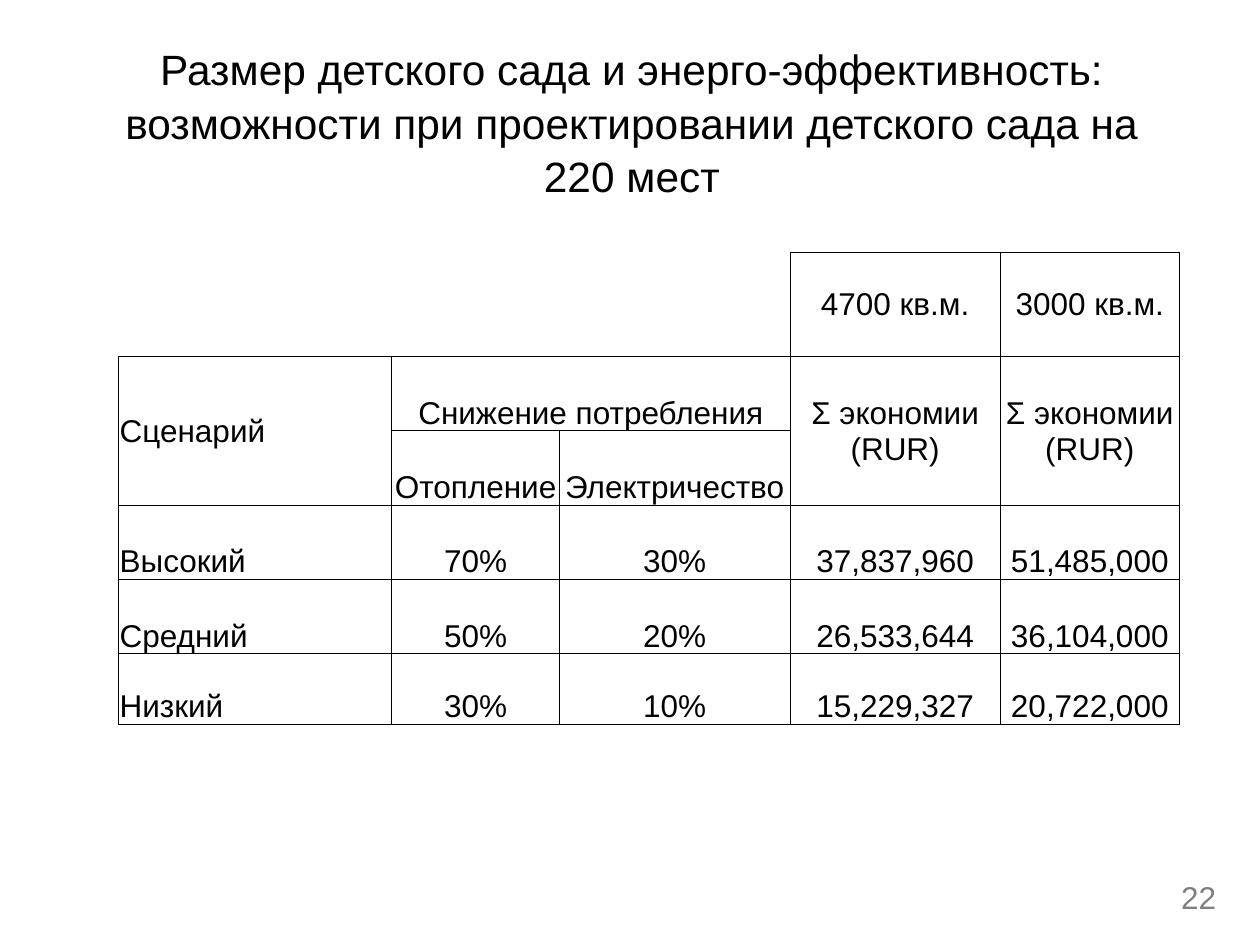
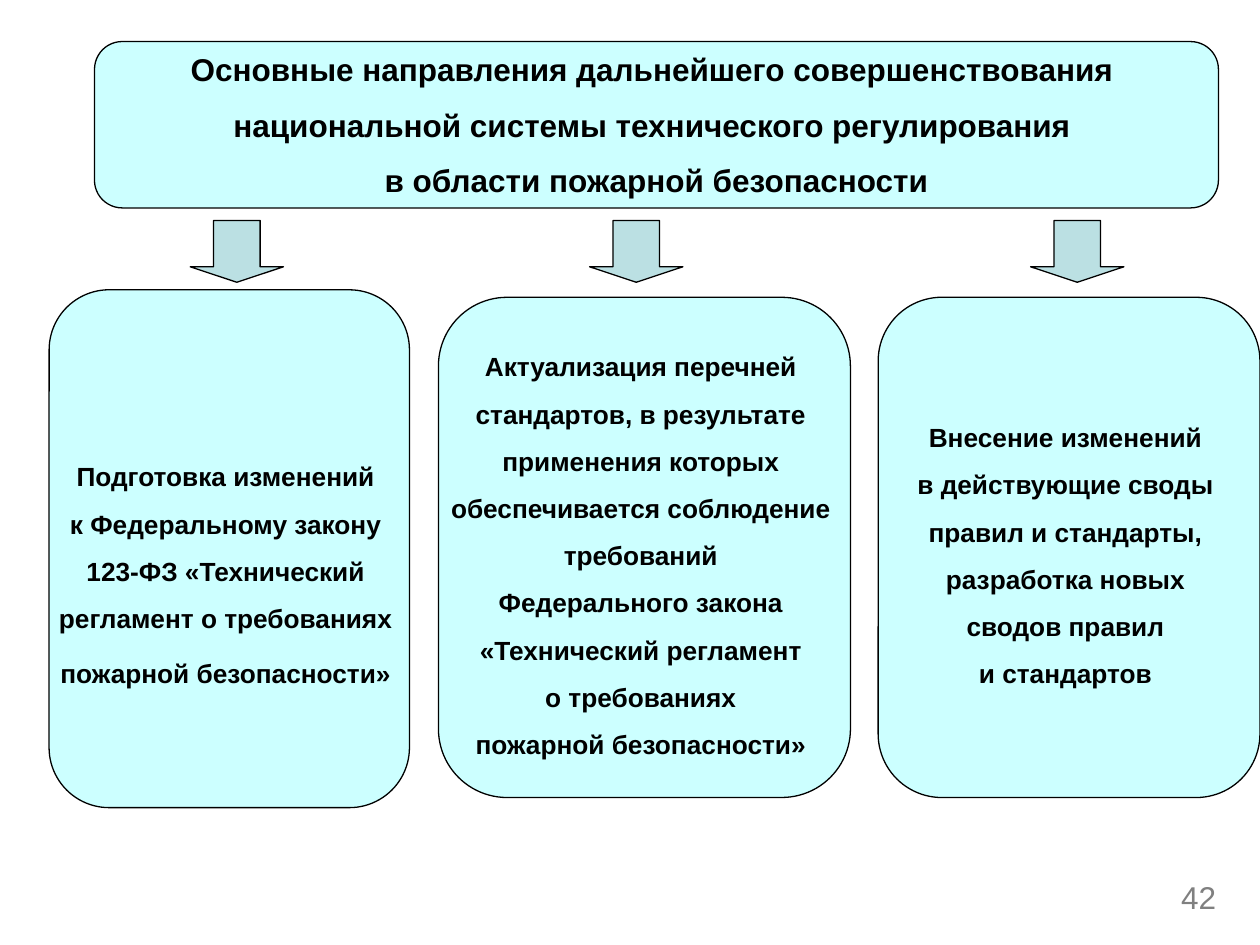
"""Builds two slides: a table of kindergarten energy savings and a fire-safety regulation scheme."""
from lxml.etree import SubElement
from pptx import Presentation
from pptx.dml.color import RGBColor
from pptx.enum.shapes import MSO_SHAPE
from pptx.enum.text import MSO_ANCHOR, PP_ALIGN
from pptx.oxml.ns import qn
from pptx.util import Inches, Pt

FONT = "Arial"
COLORS = {"text": "000000", "number": "808080", "panel": "CCFFFF", "arrow": "BBE0E3"}
NO_STYLE = "{2D5ABB26-0587-4C30-8999-92F81FD0307C}"

TITLE = ("Размер детского сада и энерго-эффективность: возможности "
         "при проектировании детского сада на 220 мест")
COL_WIDTHS = [2.17, 1.33, 1, 0.83, 1.67, 1.42]
ROW_HEIGHTS = [0.83, 0.59, 0.59, 0.59, 0.59, 0.56]
SAVINGS = "Σ экономии\v(RUR)"
ROWS = [
    ["", "", "", "", "4700 кв.м.", "3000 кв.м."],
    ["Сценарий", "Снижение потребления", "", "", SAVINGS, SAVINGS],
    ["", "Отопление", "Электричество", "", "", ""],
    ["Высокий", "70%", "30%", "", "37,837,960", "51,485,000"],
    ["Средний", "50%", "20%", "", "26,533,644", "36,104,000"],
    ["Низкий", "30%", "10%", "", "15,229,327", "20,722,000"],
]
MERGES = [((0, 1), (0, 2)), ((1, 1), (1, 3))]
MERGES += [((1, c), (2, c)) for c in (0, 4, 5)]
MERGES += [((r, 2), (r, 3)) for r in range(2, 6)]
MIDDLE_CELLS = {(0, 4), (0, 5), (1, 0), (1, 4), (1, 5)}
BLANK_COLS = 4

HEADING = [
    "Основные направления дальнейшего совершенствования ",
    "национальной системы технического регулирования ",
    "в области пожарной безопасности",
]
DIRECTIONS = [
    {"box": (0.39, 2.3, 2.86, 4.11), "arrow_x": 1.51, "top_inset": 0.34, "last_gap": 4.5,
     "lines": ["Подготовка изменений ", "к Федеральному закону ",
               "123-ФЗ «Технический ", "регламент о требованиях ",
               "пожарной безопасности» "]},
    {"box": (3.48, 2.36, 3.27, 3.97), "arrow_x": 4.68,
     "lines": ["Актуализация перечней ", "стандартов, в результате ",
               "применения которых ", "обеспечивается соблюдение ",
               "требований ", "Федерального закона ",
               "«Технический регламент ", "о требованиях ",
               "пожарной безопасности» "]},
    {"box": (6.97, 2.36, 3.03, 3.97), "arrow_x": 8.18,
     "lines": ["Внесение изменений ", "в действующие своды ",
               "правил и стандарты, ", "разработка новых ",
               "сводов правил ", "и стандартов "]},
]


def rgb(name):
    return RGBColor.from_string(COLORS[name])


def style(p, size, align, color="text", bold=False):
    p.alignment = align
    p.font.name, p.font.size, p.font.bold = FONT, Pt(size), bold
    p.font.color.rgb = rgb(color)


def add_text(s, box, text, size, align, color="text"):
    tf = s.shapes.add_textbox(*map(Inches, box)).text_frame
    tf.word_wrap = True
    tf.text = text
    style(tf.paragraphs[0], size, align, color)
    return tf


def new_slide(prs, number):
    s = prs.slides.add_slide(prs.slide_layouts[6])
    add_text(s, (8.25, 6.92, 1.5, 0.43), str(number), 18, PP_ALIGN.RIGHT, "number")
    return s


def add_outlined(s, kind, box, fill):
    sp = s.shapes.add_shape(kind, *map(Inches, box))
    sp.shadow.inherit = False
    sp.fill.solid()
    sp.fill.fore_color.rgb = rgb(fill)
    sp.line.color.rgb = rgb("text")
    sp.line.width = Pt(0.75)
    return sp


def add_panel(s, box, lines, size, top_inset=0.05, spacing=None, gap=0):
    sp = add_outlined(s, MSO_SHAPE.FLOWCHART_ALTERNATE_PROCESS, box, "panel")
    tf = sp.text_frame
    tf.word_wrap = False
    tf.vertical_anchor = MSO_ANCHOR.MIDDLE
    tf.margin_top = Inches(top_inset)
    tf.text = "\n".join(lines)
    for i, p in enumerate(tf.paragraphs):
        style(p, size, PP_ALIGN.CENTER, bold=True)
        p.line_spacing = spacing
        p.space_before = Pt(gap if i else 0)
    return tf


def set_borders(cell, visible):
    tc_pr = cell._tc.get_or_add_tcPr()
    for i, side in enumerate("LRTB"):
        ln = SubElement(tc_pr, qn(f"a:ln{side}"), w=str(Pt(0.5)))
        if side in visible:
            fill = SubElement(ln, qn("a:solidFill"))
            SubElement(fill, qn("a:srgbClr"), val=COLORS["text"])
        else:
            SubElement(ln, qn("a:noFill"))
        tc_pr.insert(i, ln)


def add_savings_table(s):
    frame = s.shapes.add_table(len(ROWS), len(COL_WIDTHS), Inches(0.94), Inches(2),
                               Inches(sum(COL_WIDTHS)), Inches(sum(ROW_HEIGHTS)))
    table = frame.table
    table.first_row = table.horz_banding = False
    table._tbl.tblPr.find(qn("a:tableStyleId")).text = NO_STYLE
    for col, width in zip(table.columns, COL_WIDTHS):
        col.width = Inches(width)
    for row, height in zip(table.rows, ROW_HEIGHTS):
        row.height = Inches(height)
    for r, texts in enumerate(ROWS):
        for c, text in enumerate(texts):
            cell = table.cell(r, c)
            cell.fill.background()
            cell.margin_left = cell.margin_right = cell.margin_top = Inches(0.01)
            cell.margin_bottom = 0
            middle = (r, c) in MIDDLE_CELLS
            cell.vertical_anchor = MSO_ANCHOR.MIDDLE if middle else MSO_ANCHOR.BOTTOM
            cell.text = text
            style(cell.text_frame.paragraphs[0], 18, PP_ALIGN.CENTER if c else PP_ALIGN.LEFT)
            if r == 0 and c < BLANK_COLS:
                set_borders(cell, "RB" if c == BLANK_COLS - 1 else "B")
            else:
                set_borders(cell, "LRTB")
    for first, last in MERGES:
        table.cell(*first).merge(table.cell(*last))


def build_savings(prs):
    s = new_slide(prs, 22)
    add_savings_table(s)
    tf = add_text(s, (0.67, 0.42, 8.69, 1.08), TITLE, 24.2, PP_ALIGN.CENTER)
    tf.vertical_anchor = MSO_ANCHOR.MIDDLE
    tf.paragraphs[0].line_spacing = 1.05


def build_directions(prs):
    s = new_slide(prs, 42)
    add_panel(s, (0.75, 0.33, 8.92, 1.32), HEADING, 18, gap=10)
    for d in DIRECTIONS:
        tf = add_panel(s, d["box"], d["lines"], 15, d.get("top_inset", 0.05), spacing=1.5)
        tf.paragraphs[-1].space_before = Pt(d.get("last_gap", 0))
        arrow = add_outlined(s, MSO_SHAPE.DOWN_ARROW, (d["arrow_x"], 1.75, 0.74, 0.49), "arrow")
        arrow.adjustments[1] = 0.25


def main():
    prs = Presentation()
    prs.slide_width, prs.slide_height = Inches(10), Inches(7.5)
    build_savings(prs)
    build_directions(prs)
    prs.save("out.pptx")


if __name__ == "__main__":
    main()
